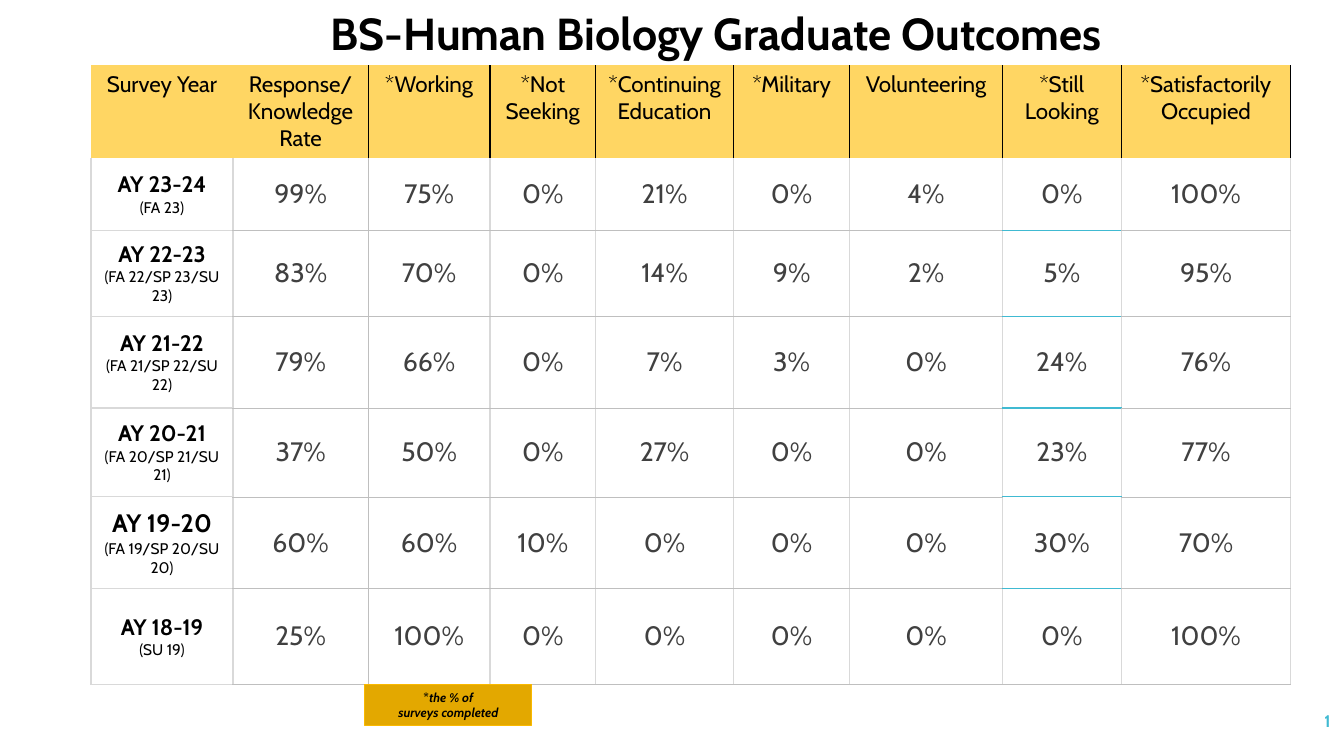
from lxml import etree
from pptx import Presentation
from pptx.dml.color import RGBColor
from pptx.enum import shapes, text
from pptx.oxml import ns
from pptx.util import Pt

FONT = "Cabin"
PLAIN = "{2D5ABB26-0587-4C30-8999-92F81FD0307C}"
HUES = {
    "ink": "000000", "text": "404040", "paper": "FFFFFF", "head": "FFD663",
    "side": "D9D9D9", "rule": "BFBFBF", "blue": "40BAD2",
    "gold": "E3A800", "rim": "FAB900",
}
WIDE = [101.5, 96.5, 87, 75.5, 98.5, 83, 109, 85, 121]
HIGH = [66.5, 51.5, 61.5, 65.5, 63.5, 65.5, 68.5]
HEADS = [
    "Survey Year", "Response/\nKnowledge\nRate", "*Working", "*Not\nSeeking",
    "*Continuing Education", "*Military", "Volunteering", "*Still Looking",
    "*Satisfactorily\nOccupied",
]
# Year, its terms, size of the year, rates in percent
YEARS = [
    ("AY 23-24", "(FA 23)", 16, [99, 75, 0, 21, 0, 4, 0, 100]),
    ("AY 22-23", "(FA 22/SP 23/SU 23)", 16, [83, 70, 0, 14, 9, 2, 5, 95]),
    ("AY 21-22", "(FA 21/SP 22/SU 22)", 16, [79, 66, 0, 7, 3, 0, 24, 76]),
    ("AY 20-21", "(FA 20/SP 21/SU 21)", 16, [37, 50, 0, 27, 0, 0, 23, 77]),
    ("AY 19-20", "(FA 19/SP 20/SU 20)", 18, [60, 60, 10, 0, 0, 0, 30, 70]),
    ("AY 18-19", "(SU 19)", 16, [25, 100, 0, 0, 0, 0, 0, 100]),
]
LOOK = HEADS.index("*Still Looking")


def tint(hue):
    return RGBColor.from_string(HUES[hue])


def style(para, size, hue="ink", bold=False, align=text.PP_ALIGN.CENTER):
    para.alignment = align
    font = para.font
    font.name, font.size, font.bold = FONT, Pt(size), bold
    font.color.rgb = tint(hue)


def edge(cell, tag, hue, width):
    line = etree.SubElement(cell._tc.get_or_add_tcPr(), ns.qn("a:" + tag),
                            w=str(Pt(width)))
    fill = etree.SubElement(line, ns.qn("a:solidFill"))
    etree.SubElement(fill, ns.qn("a:srgbClr"), val=HUES[hue])


def borders(cell, row, col):
    if row == 0:
        if col > 1:
            edge(cell, "lnL", "ink", 1)
        if col > 0:
            edge(cell, "lnR", "ink", 1)
        return
    thin, side = ("rule", 0.25), ("side", 1)
    edge(cell, "lnL", *(thin if col == 2 else side))
    edge(cell, "lnR", *(thin if col == 1 else side))
    flat = {0: side, LOOK: ("blue", 1)}.get(col, thin)
    if row > 1:
        edge(cell, "lnT", *flat)
    last = row == len(YEARS) and col == LOOK
    edge(cell, "lnB", *(thin if last else flat))


def fill_cell(cell, row, col, words):
    borders(cell, row, col)
    cell.fill.solid()
    cell.fill.fore_color.rgb = tint("paper" if row else "head")
    cell.margin_left = cell.margin_right = Pt(8.64)
    cell.margin_top = cell.margin_bottom = Pt(4.32)
    if row:
        cell.vertical_anchor = text.MSO_ANCHOR.MIDDLE
    cell.text = words
    paras = cell.text_frame.paragraphs
    if row and col == 0:
        style(paras[0], YEARS[row - 1][2], bold=True)
        style(paras[1], 11)
    else:
        for para in paras:
            style(para, *((19, "text") if row else (16,)))


def add_grid(slide):
    rows = [HEADS] + [[f"{year}\n{terms}"] + [f"{rate}%" for rate in rates]
                      for year, terms, _, rates in YEARS]
    frame = slide.shapes.add_table(len(rows), len(HEADS), Pt(65), Pt(46.5),
                                   Pt(sum(WIDE)), Pt(sum(HIGH)))
    grid = frame.table
    grid.first_row = grid.horz_banding = False
    grid._tbl.tblPr.find(ns.qn("a:tableStyleId")).text = PLAIN
    for column, width in zip(grid.columns, WIDE):
        column.width = Pt(width)
    for row, height in zip(grid.rows, HIGH):
        row.height = Pt(height)
    for r, row in enumerate(rows):
        for c, words in enumerate(row):
            fill_cell(grid.cell(r, c), r, c, words)


def add_note(slide):
    box = slide.shapes.add_shape(shapes.MSO_SHAPE.RECTANGLE, Pt(260.5),
                                 Pt(489), Pt(119.5), Pt(29))
    box.shadow.inherit = False
    box.fill.solid()
    box.fill.fore_color.rgb = tint("gold")
    box.line.color.rgb = tint("rim")
    box.line.width = Pt(0.75)
    frame = box.text_frame
    frame.vertical_anchor = text.MSO_ANCHOR.MIDDLE
    first, second = frame.paragraphs[0], frame.add_paragraph()
    first.add_run().text = "*"
    for para, words in ((first, "the % of"), (second, "surveys completed")):
        run = para.add_run()
        run.text = words
        run.font.italic = True
        style(para, 9, bold=True)


def add_title(slide):
    title = slide.shapes.title
    title.left, title.top = Pt(229), Pt(0.75)
    title.width, title.height = Pt(580), Pt(46)
    frame = title.text_frame
    frame.text = "BS-Human Biology Graduate Outcomes"
    frame.vertical_anchor = text.MSO_ANCHOR.TOP
    frame.auto_size = text.MSO_AUTO_SIZE.NONE
    style(frame.paragraphs[0], 32, bold=True, align=text.PP_ALIGN.LEFT)


def add_number(slide):
    box = slide.shapes.add_textbox(Pt(837.5), Pt(500.5), Pt(120), Pt(29))
    frame = box.text_frame
    frame.word_wrap = True
    frame.vertical_anchor = text.MSO_ANCHOR.MIDDLE
    frame.text = "1"
    para = frame.paragraphs[0]
    style(para, 12, "blue", True, text.PP_ALIGN.RIGHT)
    para.space_after = Pt(6)


def main():
    deck = Presentation()
    deck.slide_width, deck.slide_height = Pt(960), Pt(540)
    slide = deck.slides.add_slide(deck.slide_layouts[5])
    add_title(slide)
    add_number(slide)
    add_grid(slide)
    add_note(slide)
    deck.save("out.pptx")


if __name__ == "__main__":
    main()
